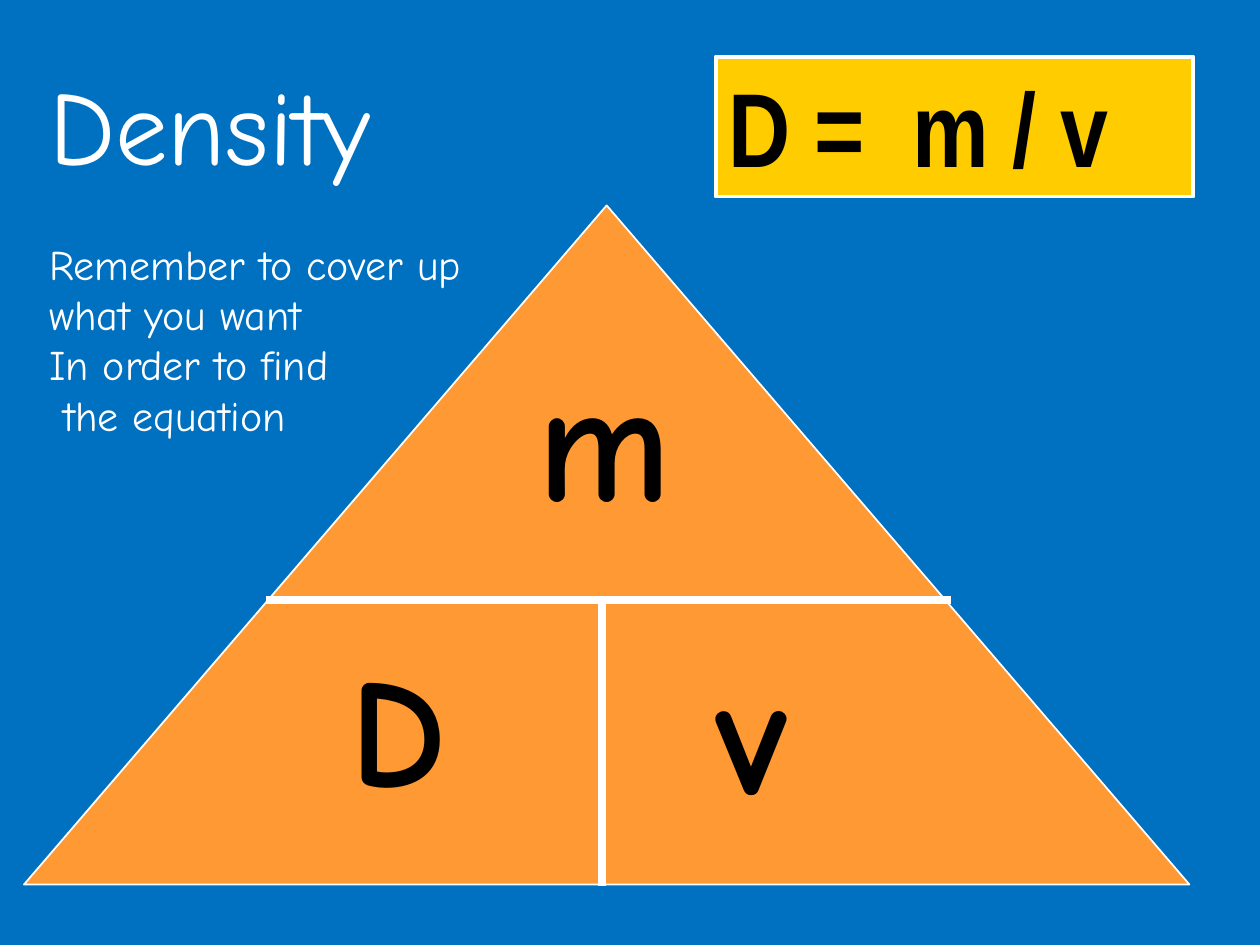
from lxml import etree
from pptx import Presentation
from pptx.dml.color import RGBColor
from pptx.enum.shapes import MSO_CONNECTOR, MSO_SHAPE
from pptx.enum.text import MSO_ANCHOR, MSO_AUTO_SIZE, PP_ALIGN
from pptx.oxml.ns import qn
from pptx.util import Inches, Pt

STRAIGHT = MSO_CONNECTOR.STRAIGHT
TRIANGLE, RECTANGLE = MSO_SHAPE.ISOSCELES_TRIANGLE, MSO_SHAPE.RECTANGLE
TOP = MSO_ANCHOR.TOP
NO_AUTOFIT = MSO_AUTO_SIZE.NONE
LEFT, CENTER = PP_ALIGN.LEFT, PP_ALIGN.CENTER

COLORS = {
    "background": "0070C0",
    "triangle": "FF9933",
    "formula": "FFCC00",
    "white": "FFFFFF",
    "black": "000000",
}
HAND_FONT = "Comic Neue"
FORMULA_FONT = "Arial Narrow"
REMINDER = [
    "Remember to cover up what you want",
    "In order to find",
    " the equation",
]


def color(name):
    return RGBColor.from_string(COLORS[name])


def inches(*lengths):
    return [Inches(length) for length in lengths]


def write(frame, lines, size, ink, font=HAND_FONT, bold=False, align=LEFT):
    frame.word_wrap = True
    frame.auto_size = NO_AUTOFIT
    frame.vertical_anchor = TOP
    frame.text = "\n".join(lines)
    for paragraph in frame.paragraphs:
        paragraph.alignment = align
        paragraph.space_before = Pt(0)
        paragraph.font.name = font
        paragraph.font.size = Pt(size)
        paragraph.font.bold = bold
        paragraph.font.color.rgb = color(ink)


def place(placeholder, box):
    placeholder.left, placeholder.top, placeholder.width, placeholder.height = inches(*box)


def remove_bullets(frame):
    for paragraph in frame.paragraphs:
        properties = paragraph._p.get_or_add_pPr()
        properties.set("marL", "0")
        properties.set("indent", "0")
        etree.SubElement(properties, qn("a:buNone")) if properties.find(qn("a:defRPr")) is None \
            else properties.find(qn("a:defRPr")).addprevious(etree.Element(qn("a:buNone")))


def add_panel(shapes, preset, box, fill, line_width):
    panel = shapes.add_shape(preset, *inches(*box))
    panel.shadow.inherit = False
    panel.fill.solid()
    panel.fill.fore_color.rgb = color(fill)
    panel.line.color.rgb = color("white")
    panel.line.width = Pt(line_width)
    return panel


def add_divider(shapes, start, end):
    divider = shapes.add_connector(STRAIGHT, *inches(*start, *end))
    divider.line.color.rgb = color("white")
    divider.line.width = Pt(4.5)
    etree.SubElement(divider._element.spPr, qn("a:effectLst"))


def add_symbol(shapes, symbol, box, size, align=CENTER):
    label = shapes.add_textbox(*inches(*box))
    write(label.text_frame, [symbol], size, "black", bold=True, align=align)


def add_formula_triangle(slide):
    shapes = slide.shapes.add_group_shape().shapes
    add_panel(shapes, TRIANGLE, (0.19, 1.63, 9.25, 5.39), "triangle", 1)
    add_divider(shapes, (2.11, 4.76), (7.55, 4.76))
    add_divider(shapes, (4.78, 4.76), (4.78, 7.03))
    add_symbol(shapes, "D", (2.11, 4.97, 2.11, 1.58), 88)
    add_symbol(shapes, "m", (3.74, 2.6, 2.11, 1.72), 96)
    add_symbol(shapes, "v", (5.59, 4.92, 2.11, 1.72), 96, LEFT)


def main():
    presentation = Presentation()
    presentation.slide_width, presentation.slide_height = inches(10, 7.5)
    slide = presentation.slides.add_slide(presentation.slide_layouts[1])
    slide.background.fill.solid()
    slide.background.fill.fore_color.rgb = color("background")

    title, reminder = slide.placeholders
    place(title, (0.29, 0.43, 3.8, 1.1))
    write(title.text_frame, ["Density"], 60, "white")
    place(reminder, (0.29, 1.84, 3.8, 1.72))
    write(reminder.text_frame, REMINDER, 24, "white")
    remove_bullets(reminder.text_frame)

    add_formula_triangle(slide)
    formula = add_panel(slide.shapes, RECTANGLE, (5.68, 0.45, 3.79, 1.11), "formula", 2.25)
    write(formula.text_frame, ["D =  m / v"], 60, "black", FORMULA_FONT, bold=True)

    presentation.save("out.pptx")


if __name__ == "__main__":
    main()
